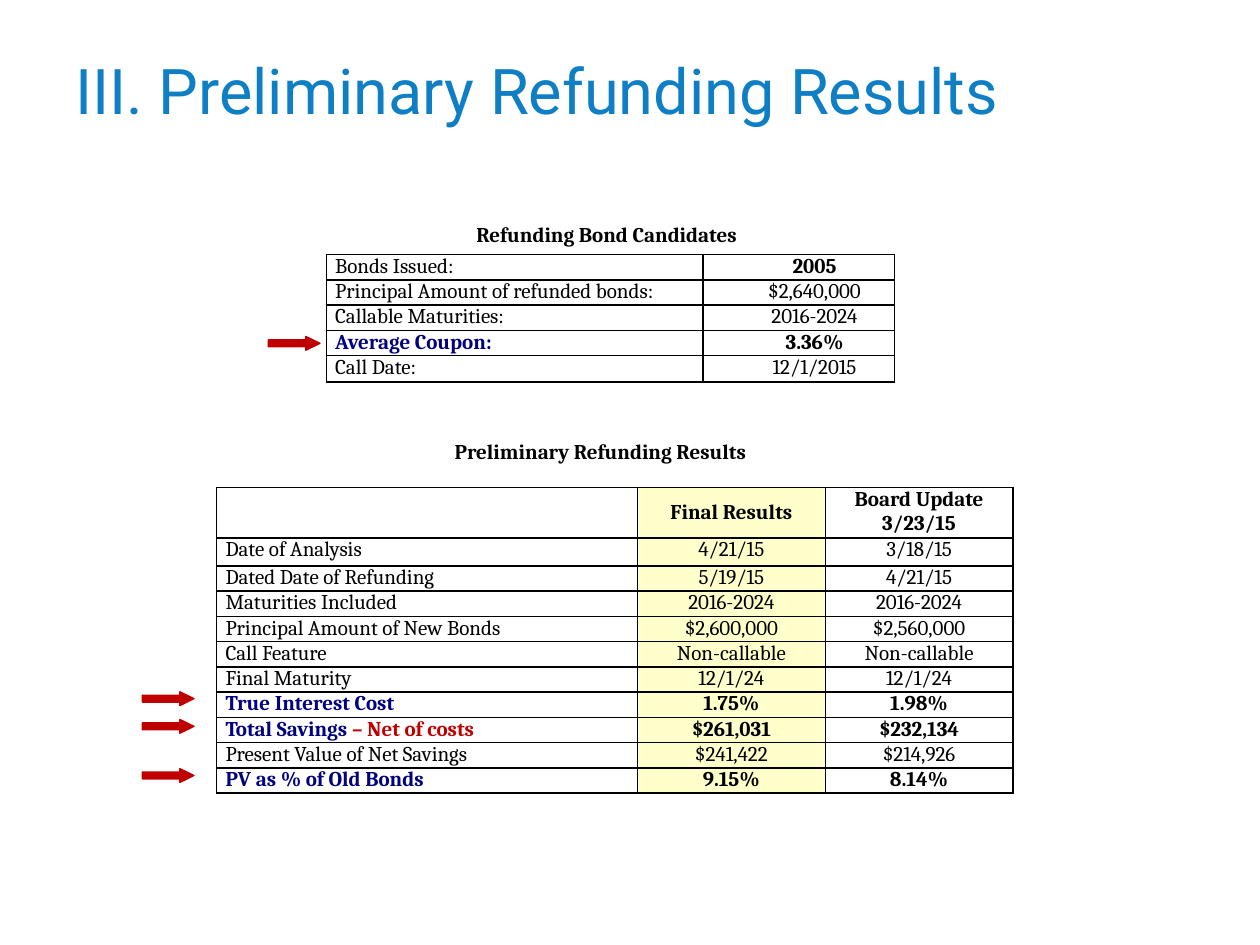
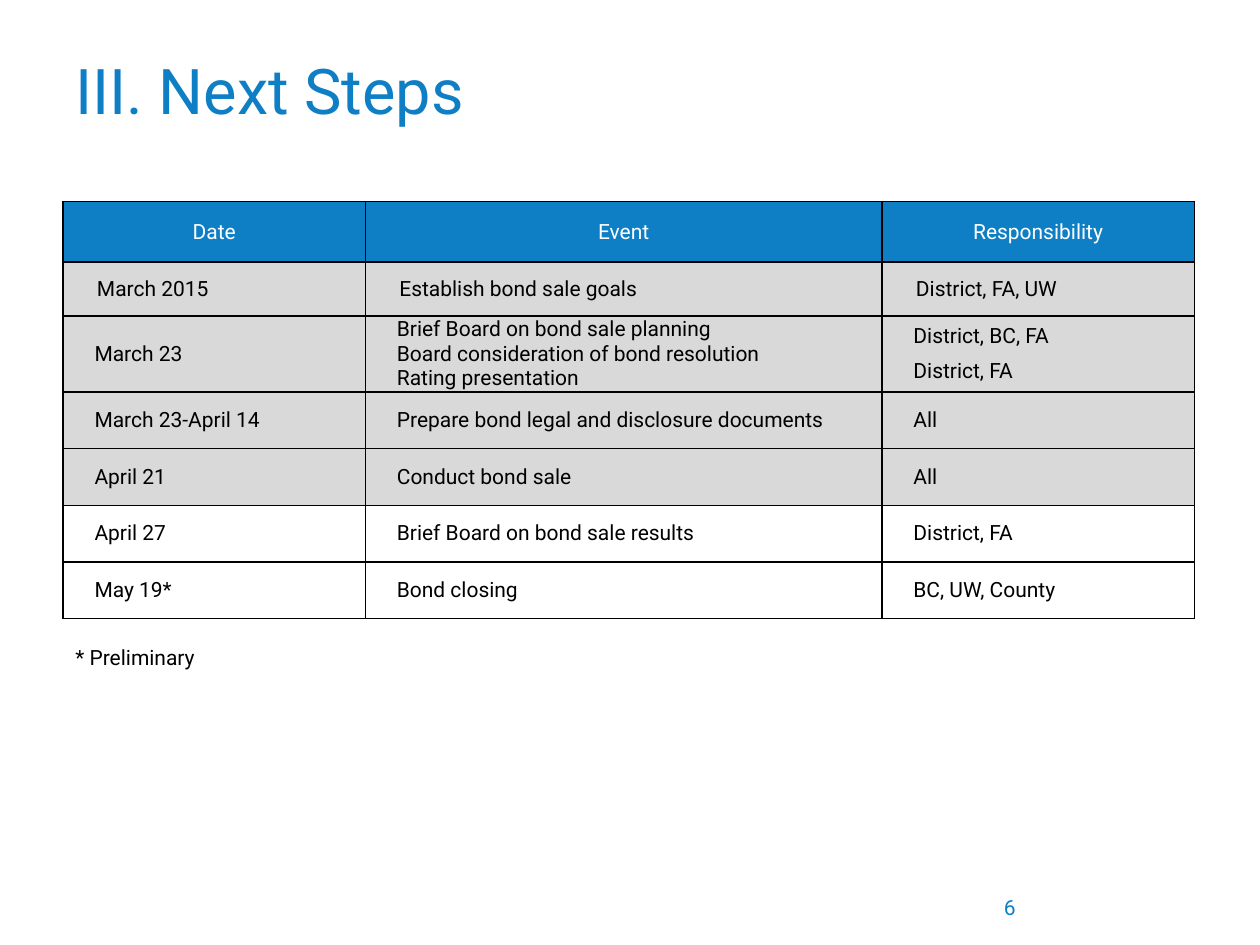
"""Build the bond refunding results and next steps slides."""
from dataclasses import dataclass
from typing import Sequence

from lxml import etree
from pptx import Presentation
from pptx import util as u
from pptx.dml import color as dml
from pptx.enum import shapes, text
from pptx.oxml import ns

COLORS = {
    "blue": "0F7FC5", "black": "000000", "white": "FFFFFF", "navy": "000080",
    "red": "C00000", "yellow": "FFFFCC", "gray": "D9D9D9",
}
SERIF, SANS = "Cambria", "Roboto"
LEFT, CENTER, RIGHT = text.PP_ALIGN.LEFT, text.PP_ALIGN.CENTER, text.PP_ALIGN.RIGHT
TOP, MIDDLE = text.MSO_ANCHOR.TOP, text.MSO_ANCHOR.MIDDLE


@dataclass
class Box:
    left: float
    top: float
    width: float
    height: float

    def lengths(self) -> list:
        return [u.Inches(value) for value in (self.left, self.top, self.width, self.height)]


@dataclass
class BondRow:
    label: str
    values: Sequence[str]
    key: bool = False
    note: str = ""


@dataclass
class Step:
    date: str
    event: str
    responsibility: str
    done: bool = True


TITLE_BOX = Box(0.5, 0.08, 8.29, 1.25)
CANDIDATES = [
    BondRow("Principal Amount of refunded bonds:", ["$2,640,000"]),
    BondRow("Callable Maturities:", ["2016-2024"]),
    BondRow("Average Coupon:", ["3.36%"], key=True),
    BondRow("Call Date:", ["12/1/2015"]),
]
RESULTS = [
    BondRow("Date of Analysis", ["4/21/15", "3/18/15"]),
    BondRow("Dated Date of Refunding", ["5/19/15", "4/21/15"]),
    BondRow("Maturities Included", ["2016-2024", "2016-2024"]),
    BondRow("Principal Amount of New Bonds", ["$2,600,000", "$2,560,000"]),
    BondRow("Call Feature", ["Non-callable", "Non-callable"]),
    BondRow("Final Maturity", ["12/1/24", "12/1/24"]),
    BondRow("True Interest Cost", ["1.75%", "1.98%"], key=True),
    BondRow("Total Savings ", ["$261,031", "$232,134"], key=True, note="– Net of costs"),
    BondRow("Present Value of Net Savings", ["$241,422", "$214,926"]),
    BondRow("PV as % of Old Bonds", ["9.15%", "8.14%"], key=True),
]
STEPS = [
    Step("March 2015", "Establish bond sale goals", "District, FA, UW"),
    Step("March 23", "Brief Board on bond sale planning\nBoard consideration of bond resolution\n"
         "Rating presentation", "District, BC, FA\nDistrict, FA"),
    Step("March 23-April 14", "Prepare bond legal and disclosure documents", "All"),
    Step("April 21", "Conduct bond sale", "All"),
    Step("April 27", "Brief Board on bond sale results", "District, FA", done=False),
    Step("May 19*", "Bond closing", "BC, UW, County", done=False),
]
ARROWS = [(2.13, 2.67), (1.13, 5.49), (1.13, 5.71), (1.13, 6.1)]


def rgb(name: str) -> dml.RGBColor:
    return dml.RGBColor.from_string(COLORS[name])


def write_text(frame, content: str, *, font: str = SANS, size: float = 12,
               color: str = "black", bold: bool = False, align=LEFT,
               gap: float = 0, append: bool = False) -> None:
    """Write each line as a paragraph, or append the content to the last one."""
    for index, line in enumerate(content.split("\n")):
        paragraph = frame.add_paragraph() if index else frame.paragraphs[-1]
        if not append:
            paragraph.alignment = align
        if index and gap:
            paragraph.space_before = u.Pt(gap)
        run = paragraph.add_run()
        run.text = line
        run.font.name, run.font.size, run.font.bold = font, u.Pt(size), bold
        run.font.color.rgb = rgb(color)


def add_label(slide, box: Box, content: str, anchor=MIDDLE, **text_format) -> None:
    frame = slide.shapes.add_textbox(*box.lengths()).text_frame
    frame.word_wrap = True
    frame.vertical_anchor = anchor
    write_text(frame, content, **text_format)


def add_titled_slide(presentation, title: str):
    slide = presentation.slides.add_slide(presentation.slide_layouts[6])
    add_label(slide, TITLE_BOX, title, size=36, color="blue")
    return slide


def add_grid(slide, left: float, top: float, widths: Sequence[float], heights: Sequence[float]):
    """Add an unstyled table with the given column widths and row heights."""
    box = Box(left, top, sum(widths), sum(heights))
    table = slide.shapes.add_table(len(heights), len(widths), *box.lengths()).table
    table.first_row = table.horz_banding = False
    for column, width in zip(table.columns, widths):
        column.width = u.Inches(width)
    for row, height in zip(table.rows, heights):
        row.height = u.Inches(height)
    return table


def fill_cell(cell, content: str, *, fill: str = "", inset: float = 0.07,
              indent: float = 0, anchor=TOP, **text_format) -> None:
    """Border, fill and write one table cell."""
    properties = cell._tc.get_or_add_tcPr()
    for side in ("lnL", "lnR", "lnT", "lnB"):
        line = etree.SubElement(properties, ns.qn(f"a:{side}"), w=str(u.Pt(1)))
        solid = etree.SubElement(line, ns.qn("a:solidFill"))
        etree.SubElement(solid, ns.qn("a:srgbClr"), val=COLORS["black"])
    if fill:
        cell.fill.solid()
        cell.fill.fore_color.rgb = rgb(fill)
    else:
        cell.fill.background()
    cell.margin_left, cell.margin_right = u.Inches(inset + indent), u.Inches(inset)
    cell.margin_top = cell.margin_bottom = 0
    cell.vertical_anchor = anchor
    write_text(cell.text_frame, content, **text_format)


def fill_bond_rows(table, rows: Sequence[BondRow], value_fills: Sequence[str],
                   indent: float = 0) -> None:
    """Fill the rows below the first one."""
    for index, row in enumerate(rows, 1):
        label = table.cell(index, 0)
        fill_cell(label, row.label, font=SERIF, bold=row.key,
                  color="navy" if row.key else "black")
        if row.note:
            write_text(label.text_frame, row.note, font=SERIF, bold=True, color="red", append=True)
        for column, (value, fill) in enumerate(zip(row.values, value_fills), 1):
            fill_cell(table.cell(index, column), value, fill=fill, indent=indent,
                      font=SERIF, bold=row.key, align=CENTER)


def add_arrow(slide, left: float, top: float) -> None:
    arrow = slide.shapes.add_shape(shapes.MSO_SHAPE.RIGHT_ARROW,
                                   *Box(left, top, 0.41, 0.11).lengths())
    arrow.adjustments[0], arrow.adjustments[1] = 0.5, 1.02
    arrow.shadow.inherit = False
    arrow.fill.solid()
    arrow.fill.fore_color.rgb = arrow.line.color.rgb = rgb("red")
    arrow.line.width = u.Pt(0.75)


def build_results(presentation) -> None:
    slide = add_titled_slide(presentation, "III. Preliminary Refunding Results")
    heading = {"font": SERIF, "bold": True}

    add_label(slide, Box(2.75, 1.71, 4.13, 0.3), "Refunding Bond Candidates",
              align=CENTER, **heading)
    candidates = add_grid(slide, 2.59, 2.02, [2.99, 1.52], [0.2] * 4 + [0.21])
    fill_cell(candidates.cell(0, 0), "Bonds Issued:", font=SERIF)
    fill_cell(candidates.cell(0, 1), "2005", indent=0.25, align=CENTER, **heading)
    fill_bond_rows(candidates, CANDIDATES, [""], indent=0.25)

    add_label(slide, Box(3.51, 3.43, 3.47, 0.3), "Preliminary Refunding Results", **heading)
    results = add_grid(slide, 1.72, 3.87, [3.34, 1.49, 1.49], [0.4, 0.22] + [0.2] * 9)
    fill_cell(results.cell(0, 0), "")
    fill_cell(results.cell(0, 1), "Final Results", fill="yellow", anchor=MIDDLE,
              align=CENTER, **heading)
    fill_cell(results.cell(0, 2), "Board Update 3/23/15", align=CENTER, **heading)
    fill_bond_rows(results, RESULTS, ["yellow", ""])

    for left, top in ARROWS:
        add_arrow(slide, left, top)


def build_next_steps(presentation) -> None:
    slide = add_titled_slide(presentation, "III. Next Steps")
    add_label(slide, Box(5.83, 7, 2.33, 0.4), "6", color="blue", align=RIGHT)
    table = add_grid(slide, 0.5, 1.6, [2.4, 4.1, 2.48], [0.48, 0.43, 0.59] + [0.45] * 4)
    for column, name in enumerate(("Date", "Event", "Responsibility")):
        fill_cell(table.cell(0, column), name, fill="blue", anchor=MIDDLE,
                  color="white", align=CENTER)
    for index, step in enumerate(STEPS, 1):
        for column, content in enumerate((step.date, step.event, step.responsibility)):
            fill_cell(table.cell(index, column), content, fill="gray" if step.done else "",
                      inset=0.07 if index == 1 else 0.05, indent=0.2, anchor=MIDDLE,
                      gap=6 if column == 2 else 0)
    add_label(slide, Box(0.5, 5.07, 2.67, 0.3), "* Preliminary", anchor=TOP)


def main() -> None:
    presentation = Presentation()
    presentation.slide_width, presentation.slide_height = u.Inches(10), u.Inches(7.5)
    build_results(presentation)
    build_next_steps(presentation)
    presentation.save("out.pptx")


if __name__ == "__main__":
    main()
